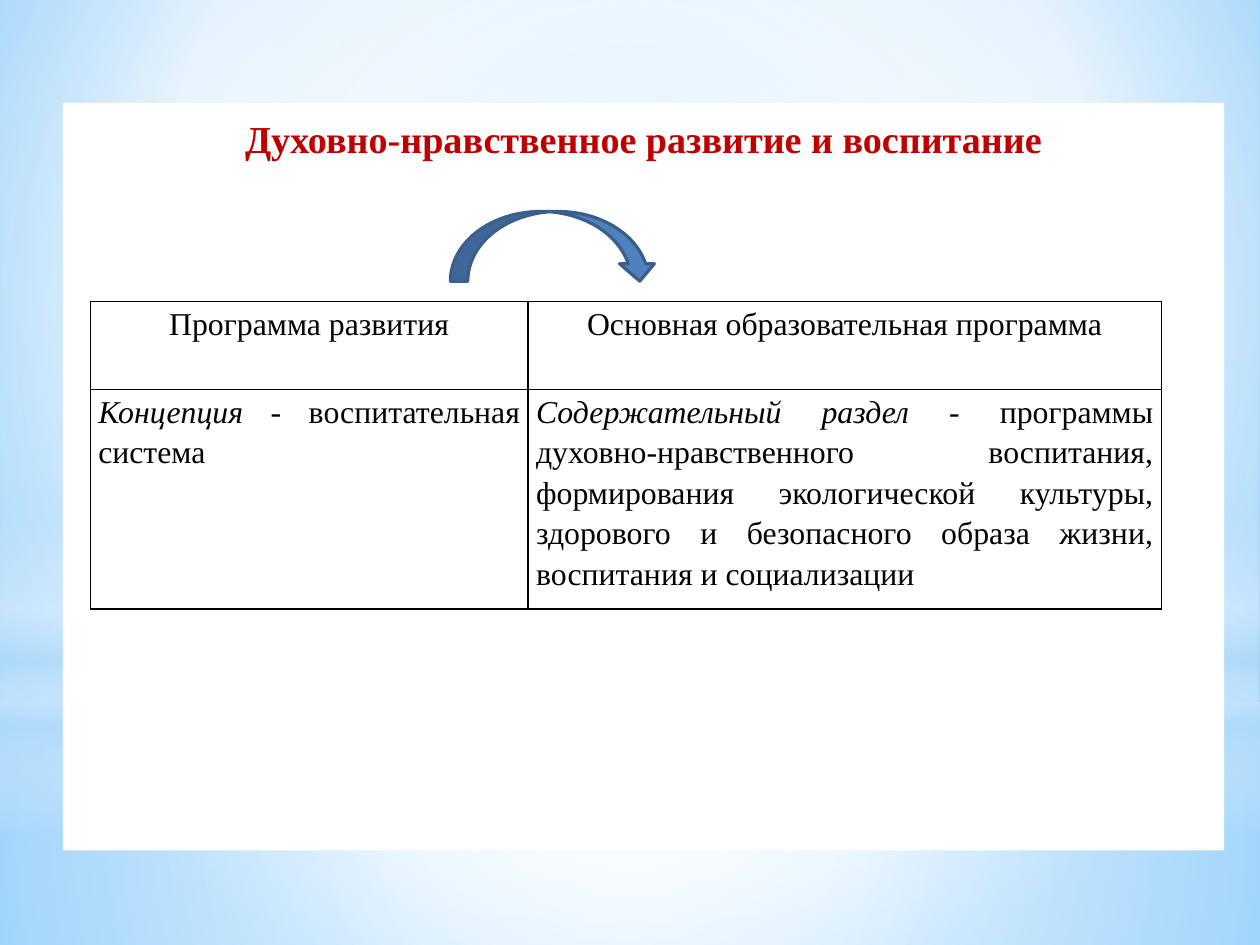
import pptx
import pptx.util
import pptx.dml.color
import pptx.enum.shapes
import pptx.enum.text
import pptx.oxml
import pptx.oxml.ns
import lxml.etree

Inches = pptx.util.Inches
Pt = pptx.util.Pt
RGBColor = pptx.dml.color.RGBColor
SHAPE = pptx.enum.shapes.MSO_SHAPE
ALIGN = pptx.enum.text.PP_ALIGN
qn = pptx.oxml.ns.qn

WHITE = RGBColor(0xFF, 0xFF, 0xFF)
BLACK = RGBColor(0, 0, 0)
RED = RGBColor(0xC0, 0, 0)
BLUE = RGBColor(0x4F, 0x81, 0xBD)
DARK_BLUE = RGBColor(0x3A, 0x5F, 0x8C)
SKY = RGBColor(0x9E, 0xD5, 0xFF)
DEEP_SKY = RGBColor(0x5B, 0xB9, 0xFF)
PALE_BLUE = RGBColor(0xB4, 0xDC, 0xFA)

FONT = "Times New Roman"
CM_PER_INCH = 2.54
WIDTH, HEIGHT = 28 / CM_PER_INCH, 21 / CM_PER_INCH
HORIZON = 6.15
CENTRE = (50, 50, 50, 50)

HEADERS = ["Программа развития", "Основная образовательная программа"]
DETAILS = [
    ("Концепция - ", "воспитательная система"),
    ("Содержательный раздел - ",
     "программы духовно-нравственного воспитания, формирования экологической "
     "культуры, здорового и безопасного образа жизни, воспитания и социализации"),
]


def sub(parent, tag, **attrs):
    return lxml.etree.SubElement(parent, qn(tag), {k: str(v) for k, v in attrs.items()})


def set_gradient(fill, element, stops, focus=None, angle=0):
    fill.gradient()
    grad = element.find(".//" + qn("a:gradFill"))
    for child in list(grad):
        grad.remove(child)
    stop_list = sub(grad, "a:gsLst")
    for position, color, opacity in stops:
        stop = sub(stop_list, "a:gs", pos=position * 1000)
        clr = sub(stop, "a:srgbClr", val=color)
        sub(clr, "a:alpha", val=opacity * 1000)
    if focus:
        circle = sub(grad, "a:path", path="circle")
        sub(circle, "a:fillToRect", **{k: v * 1000 for k, v in zip("ltrb", focus)})
    else:
        sub(grad, "a:lin", ang=angle * 60000, scaled=0)


def add_plain_shape(slide, kind, box):
    sp = slide.shapes.add_shape(kind, *map(Inches, box))
    sp.shadow.inherit = False
    sp.line.fill.background()
    return sp


def add_backdrop(slide, left, top, width, height):
    set_gradient(slide.background.fill, slide.element,
                 [(0, SKY, 100), (60, WHITE, 100), (100, DEEP_SKY, 100)], (20, 10, 20, 60))
    layers = [
        (SHAPE.RECTANGLE, HORIZON, height - HORIZON,
         [(0, WHITE, 91), (37, WHITE, 76), (100, PALE_BLUE, 79)], CENTRE),
        (SHAPE.RECTANGLE, 0, HORIZON,
         [(0, WHITE, 89), (48, WHITE, 62), (100, PALE_BLUE, 79)], CENTRE),
        (SHAPE.RECTANGLE, 4.54, 2.76,
         [(0, WHITE, 0), (29, WHITE, 30), (45, PALE_BLUE, 40),
          (55, WHITE, 26), (65, PALE_BLUE, 60), (100, WHITE, 0)], None),
        (SHAPE.OVAL, 1.93, HORIZON, [(0, WHITE, 100), (56, WHITE, 0)], CENTRE),
    ]
    for kind, offset, depth, stops, focus in layers:
        sp = add_plain_shape(slide, kind, (left, top + offset, width, depth))
        set_gradient(sp.fill, sp.element, stops, focus, 90)


def format_paragraph(p, align, size, color, bold=False):
    p.alignment = align
    p.line_spacing = 1.15
    for r in p.runs:
        r.font.name = FONT
        r.font.size = Pt(size)
        r.font.color.rgb = color
        r.font.bold = bold


def add_panel(slide, left, top, width, height):
    sp = add_plain_shape(slide, SHAPE.RECTANGLE, (left, top, width, height))
    sp.fill.solid()
    sp.fill.fore_color.rgb = WHITE
    tf = sp.text_frame
    tf.word_wrap = True
    tf.vertical_anchor = pptx.enum.text.MSO_ANCHOR.TOP
    tf.text = "Духовно-нравственное развитие и воспитание"
    format_paragraph(tf.paragraphs[0], ALIGN.CENTER, 24, RED, True)


def style_cell(cell):
    cell.margin_left = cell.margin_right = Inches(0.07)
    cell.margin_top = cell.margin_bottom = 0
    tc_pr = cell._tc.get_or_add_tcPr()
    for side in ("a:lnL", "a:lnR", "a:lnT", "a:lnB"):
        ln = sub(tc_pr, side, w=Pt(1))
        sub(sub(ln, "a:solidFill"), "a:srgbClr", val=BLACK)
    cell.fill.background()


def add_programme_table(slide, left, top, widths, heights):
    frame = slide.shapes.add_table(len(heights), len(widths), Inches(left), Inches(top),
                                   Inches(sum(widths)), Inches(sum(heights)))
    table = frame.table
    table.first_row = table.horz_banding = False
    for row, height in zip(table.rows, heights):
        row.height = Inches(height)
    for i, (width, header, (term, text)) in enumerate(zip(widths, HEADERS, DETAILS)):
        table.columns[i].width = Inches(width)
        head, body = table.cell(0, i), table.cell(1, i)
        head.text_frame.text = header
        p = body.text_frame.paragraphs[0]
        p.text = term
        p.runs[0].font.italic = True
        p.add_run().text = text
        for cell, align in ((head, ALIGN.CENTER), (body, ALIGN.JUSTIFY)):
            style_cell(cell)
            format_paragraph(cell.text_frame.paragraphs[0], align, 20, BLACK)


def add_transition_arrow(slide, left, top, width, height):
    sp = add_plain_shape(slide, SHAPE.CURVED_DOWN_ARROW, (left, top, width, height))
    sp.fill.solid()
    sp.fill.fore_color.rgb = BLUE
    sp.line.color.rgb = DARK_BLUE
    sp.line.width = Pt(2)


def main():
    prs = pptx.Presentation()
    prs.slide_width = Inches(WIDTH)
    prs.slide_height = Inches(HEIGHT)
    slide = prs.slides.add_slide(prs.slide_layouts[6])
    add_backdrop(slide, 0, 0, WIDTH, HEIGHT)
    add_panel(slide, 0.55, 0.9, 10.16, 6.54)
    add_programme_table(slide, 0.79, 2.64, (3.83, 5.54), (0.77, 1.92))
    add_transition_arrow(slide, 3.94, 1.85, 1.81, 0.61)
    prs.save("out.pptx")


if __name__ == "__main__":
    main()
